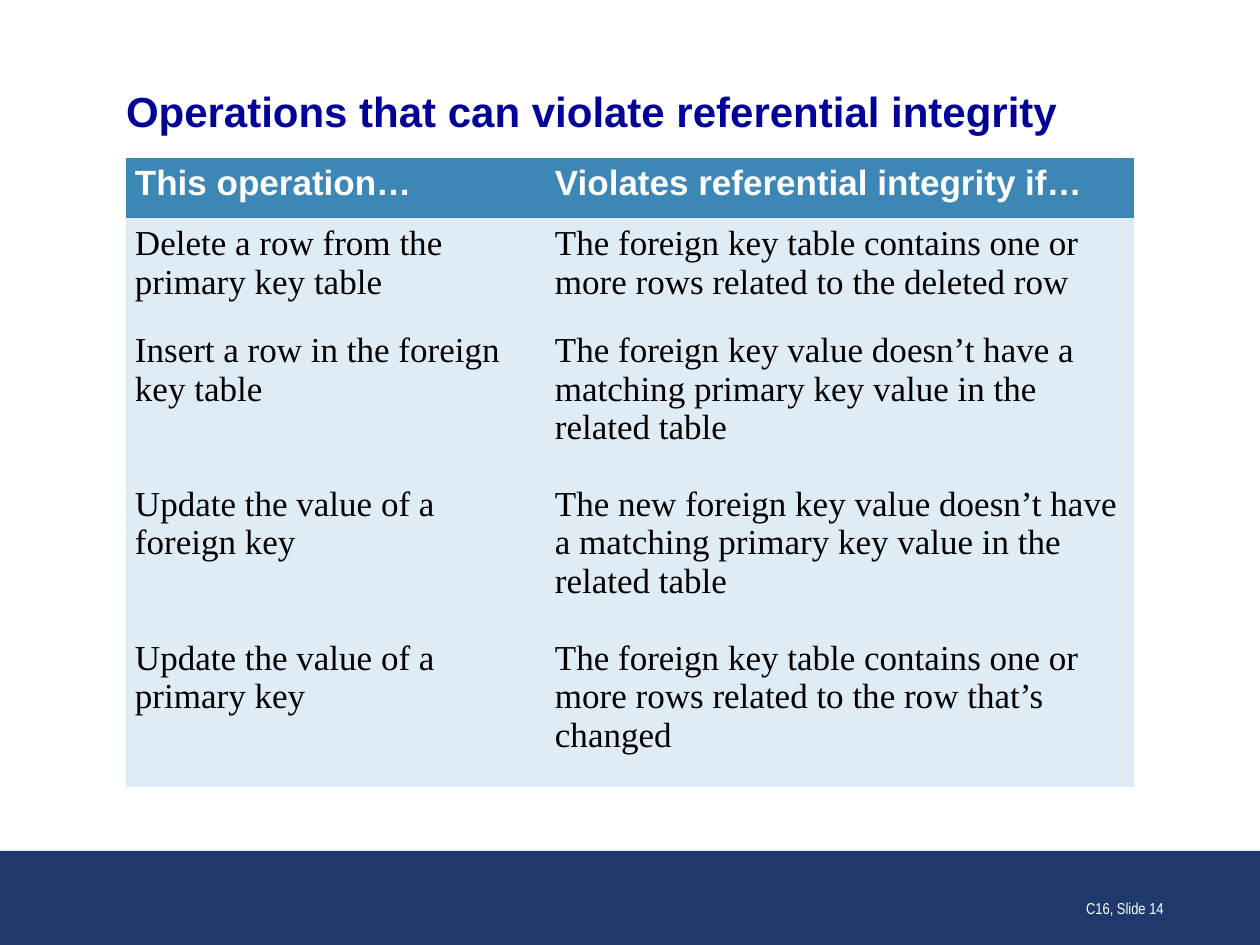
from pptx import Presentation
from pptx import util as u
from pptx.dml.color import RGBColor
from pptx.enum import shapes, text
from pptx.oxml.ns import qn

SCALE = 914400 / 126
NAVY = RGBColor(0x20, 0x39, 0x6D)
TITLE_BLUE = RGBColor(0x00, 0x00, 0x99)
HEADER_BLUE = RGBColor(0x3D, 0x87, 0xB7)
PALE_BLUE = RGBColor(0xDF, 0xEC, 0xF5)
WHITE = RGBColor(0xFF, 0xFF, 0xFF)
BLACK = RGBColor(0, 0, 0)
NO_STYLE = "{2D5ABB26-0587-4C30-8999-92F81FD0307C}"

OPERATIONS = [
    ("This operation…", "Violates referential integrity if…"),
    ("Delete a row from the primary key table",
     "The foreign key table contains one or more rows related to the deleted row"),
    ("Insert a row in the foreign key table",
     "The foreign key value doesn’t have a matching primary key value in the related table"),
    ("Update the value of a foreign key",
     "The new foreign key value doesn’t have a matching primary key value in the related table"),
    ("Update the value of a primary key",
     "The foreign key table contains one or more rows related to the row that’s changed"),
]


def px(length):
    return u.Emu(round(length * SCALE))


class Deck:
    heading_font = "Arial"
    body_font = "Times New Roman"
    footer_font = "Arial Narrow"

    def __init__(self, width, height):
        self.prs = Presentation()
        self.prs.slide_width, self.prs.slide_height = px(width), px(height)
        self.slide = self.prs.slides.add_slide(self.prs.slide_layouts[5])

    def add_words(self, frame, words, font, size, color, bold=False,
                  align=text.PP_ALIGN.LEFT, after=0):
        paragraph = frame.paragraphs[0]
        paragraph.alignment = align
        paragraph.space_before = u.Pt(0)
        paragraph.space_after = u.Pt(after)
        run = paragraph.add_run()
        run.text = words
        run.font.name, run.font.size, run.font.bold = font, u.Pt(size), bold
        run.font.color.rgb = color

    def title(self, words, left, top, width, height):
        heading = self.slide.shapes.title
        heading.left, heading.top = px(left), px(top)
        heading.width, heading.height = px(width), px(height)
        frame = heading.text_frame
        frame.margin_left = frame.margin_right = 0
        frame.margin_top = frame.margin_bottom = 0
        frame.word_wrap = True
        frame.auto_size = text.MSO_AUTO_SIZE.NONE
        frame.vertical_anchor = text.MSO_ANCHOR.MIDDLE
        self.add_words(frame, words, self.heading_font, 24, TITLE_BLUE, bold=True, after=6)

    def band(self, left, top, width, height):
        footer = self.slide.shapes.add_shape(
            shapes.MSO_SHAPE.RECTANGLE, px(left), px(top), px(width), px(height))
        footer.shadow.inherit = False
        footer.fill.solid()
        footer.fill.fore_color.rgb = NAVY
        footer.line.fill.background()

    def table(self, rows, left, top, widths, heights):
        grid = self.slide.shapes.add_table(
            len(rows), len(widths), px(left), px(top),
            px(sum(widths)), px(sum(heights))).table
        grid.horz_banding = False
        grid._tbl.tblPr.find(qn("a:tableStyleId")).text = NO_STYLE
        for column, width in zip(grid.columns, widths):
            column.width = px(width)
        for index, (row, height) in enumerate(zip(grid.rows, heights)):
            row.height = px(height)
            header = index == 0
            for cell, words in zip(row.cells, rows[index]):
                cell.margin_left = cell.margin_right = px(9)
                cell.margin_top = cell.margin_bottom = px(6)
                cell.fill.solid()
                cell.fill.fore_color.rgb = HEADER_BLUE if header else PALE_BLUE
                self.add_words(cell.text_frame, words,
                               self.heading_font if header else self.body_font, 20,
                               WHITE if header else BLACK, bold=header,
                               after=9 if index == len(rows) - 1 else 6)

    def slide_number(self, words, left, top, width, height):
        frame = self.slide.shapes.add_textbox(
            px(left), px(top), px(width), px(height)).text_frame
        frame.word_wrap = True
        frame.vertical_anchor = text.MSO_ANCHOR.BOTTOM
        self.add_words(frame, words, self.footer_font, 9, WHITE, align=text.PP_ALIGN.RIGHT)


def main():
    deck = Deck(1260, 945)
    deck.band(0, 851, 1260, 94)
    deck.title("Operations that can violate referential integrity", 126, 86, 1008, 50)
    deck.table(OPERATIONS, 126, 158, [420, 588], [60, 107] + [154] * 3)
    deck.slide_number("C16, Slide 14", 914, 861, 262, 63)
    deck.prs.save("out.pptx")


if __name__ == "__main__":
    main()
